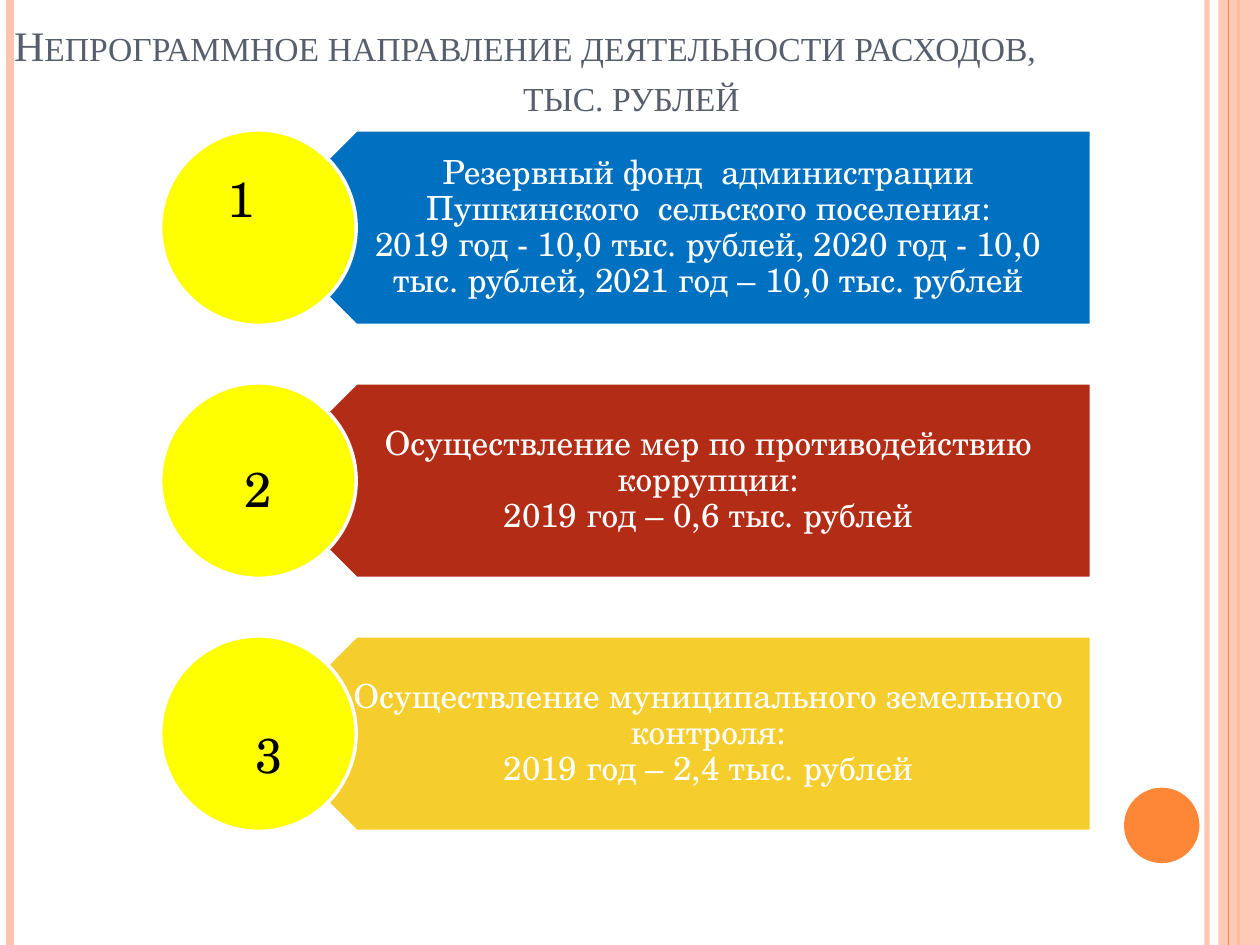
import lxml.etree
import pptx
import pptx.dml.color
import pptx.enum.shapes
import pptx.enum.text
import pptx.oxml.ns
import pptx.util
from pptx.util import Cm, Pt

COLORS = {
    "peach": "FEC3AE", "orange": "FE8637", "title": "575F6D",
    "blue": "0070C0", "red": "B32C16", "gold": "F5CD2D",
    "yellow": "FFFF00", "white": "FFFFFF", "black": "000000",
}
RGB = {name: pptx.dml.color.RGBColor.from_string(value) for name, value in COLORS.items()}
SHAPES = pptx.enum.shapes.MSO_SHAPE
ALIGN = pptx.enum.text.PP_ALIGN
ANCHOR = pptx.enum.text.MSO_ANCHOR
qn = pptx.oxml.ns.qn


def write_text(shape, text, size, color, font="TeX Gyre Schola", aligns=(ALIGN.LEFT,),
               anchor=ANCHOR.TOP, spacing=1.0, small_caps=False):
    """Fill a shape with one paragraph per line of text; aligns repeat in turn."""
    frame = shape.text_frame
    frame.word_wrap = True
    frame.vertical_anchor = anchor
    frame.text = text
    for index, paragraph in enumerate(frame.paragraphs):
        paragraph.alignment = aligns[index % len(aligns)]
        paragraph.line_spacing = spacing
        paragraph.space_before = Pt(0)
        run = paragraph.runs[0]
        run.font.name = font
        run.font.size = Pt(size)
        run.font.color.rgb = RGB[color]
        if small_caps:
            run.font._element.set("cap", "small")


def add_filled(kind, left, top, width, height, fill, outline=None):
    shape = slide.shapes.add_shape(kind, Cm(left), Cm(top), Cm(width), Cm(height))
    shape.shadow.inherit = False
    shape.fill.solid()
    shape.fill.fore_color.rgb = RGB[fill]
    if outline:
        shape.line.color.rgb = RGB[outline]
        shape.line.width = Pt(2)
    else:
        shape.line.fill.background()
    return shape


presentation = pptx.Presentation()
presentation.slide_width = Cm(25.4)
presentation.slide_height = Cm(19.05)
slide = presentation.slides.add_slide(presentation.slide_layouts[5])

# Side stripes; the wide band lies over all of them but the thin orange one
stripes = []
for x, color, width in [(24.33, "peach", 3), (0.2, "peach", 4.5),
                        (24.97, "orange", 1.5), (24.77, "orange", 0.75)]:
    if width == 0.75:
        band = add_filled(SHAPES.RECTANGLE, 24.56, 0, 0.84, 19.05, "peach")
    stripe = slide.shapes.add_connector(
        pptx.enum.shapes.MSO_CONNECTOR.STRAIGHT, Cm(x), Cm(0), Cm(x), Cm(19.05))
    stripe.line.color.rgb = RGB[color]
    stripe.line.width = Pt(width)
    lxml.etree.SubElement(stripe._element.spPr, qn("a:effectLst"))
    stripes.append(stripe)
for shape, opacity in [(band, 87), (stripes[0], 93)]:
    color_element = next(shape._element.spPr.iter(qn("a:srgbClr")))
    lxml.etree.SubElement(color_element, qn("a:alpha"), val=str(opacity * 1000))
add_filled(SHAPES.OVAL, 22.66, 15.88, 1.52, 1.52, "orange")

# The title box ends above the first row
title = slide.shapes.title
title.left, title.top, title.width, title.height = Cm(0.03), Cm(0.3), Cm(25.4), Cm(2.25)
write_text(title, "Непрограммное направление деятельности расходов,\nтыс. рублей",
           24, "title", font="Times New Roman", aligns=(ALIGN.LEFT, ALIGN.CENTER),
           anchor=ANCHOR.BOTTOM, small_caps=True)

# Expense rows: colour, text, and left, top and width of the number
rows = [
    ("blue", "Резервный фонд  администрации Пушкинского  сельского поселения:\n"
             "2019 год - 10,0 тыс. рублей, 2020 год - 10,0 тыс. рублей, "
             "2021 год – 10,0 тыс. рублей", (4.34, 3.28, 0.99)),
    ("red", "Осуществление мер по противодействию коррупции:\n"
            "2019 год – 0,6 тыс. рублей", (4.67, 9.12, 0.89)),
    ("gold", "Осуществление муниципального земельного контроля:\n"
             "2019 год – 2,4 тыс. рублей", (4.9, 14.48, 0.56)),
]
ROW_TOP, ROW_PITCH, ROW_HEIGHT = 2.62, 5.1, 3.94
ARROW_LEFT, ARROW_WIDTH = 5.21, 16.79

for index, (color, text, (left, number_top, width)) in enumerate(rows):
    top = ROW_TOP + index * ROW_PITCH
    arrow = add_filled(SHAPES.PENTAGON, ARROW_LEFT, top, ARROW_WIDTH, ROW_HEIGHT,
                       color, outline="white")
    arrow.rotation = 180

    label = slide.shapes.add_textbox(Cm(ARROW_LEFT), Cm(top), Cm(ARROW_WIDTH), Cm(ROW_HEIGHT))
    label.text_frame.margin_left = Cm(1.73)
    label.text_frame.margin_right = Cm(0.38)
    label.text_frame.margin_top = label.text_frame.margin_bottom = Cm(0.2)
    write_text(label, text, 19, "white", aligns=(ALIGN.CENTER,),
               anchor=ANCHOR.MIDDLE, spacing=0.9)

    add_filled(SHAPES.OVAL, ARROW_LEFT - ROW_HEIGHT / 2, top, ROW_HEIGHT, ROW_HEIGHT,
               "yellow", outline="white")
    number = slide.shapes.add_textbox(Cm(left), Cm(number_top), Cm(width), Cm(1.45))
    write_text(number, str(index + 1), 28, "black")

presentation.save("out.pptx")
